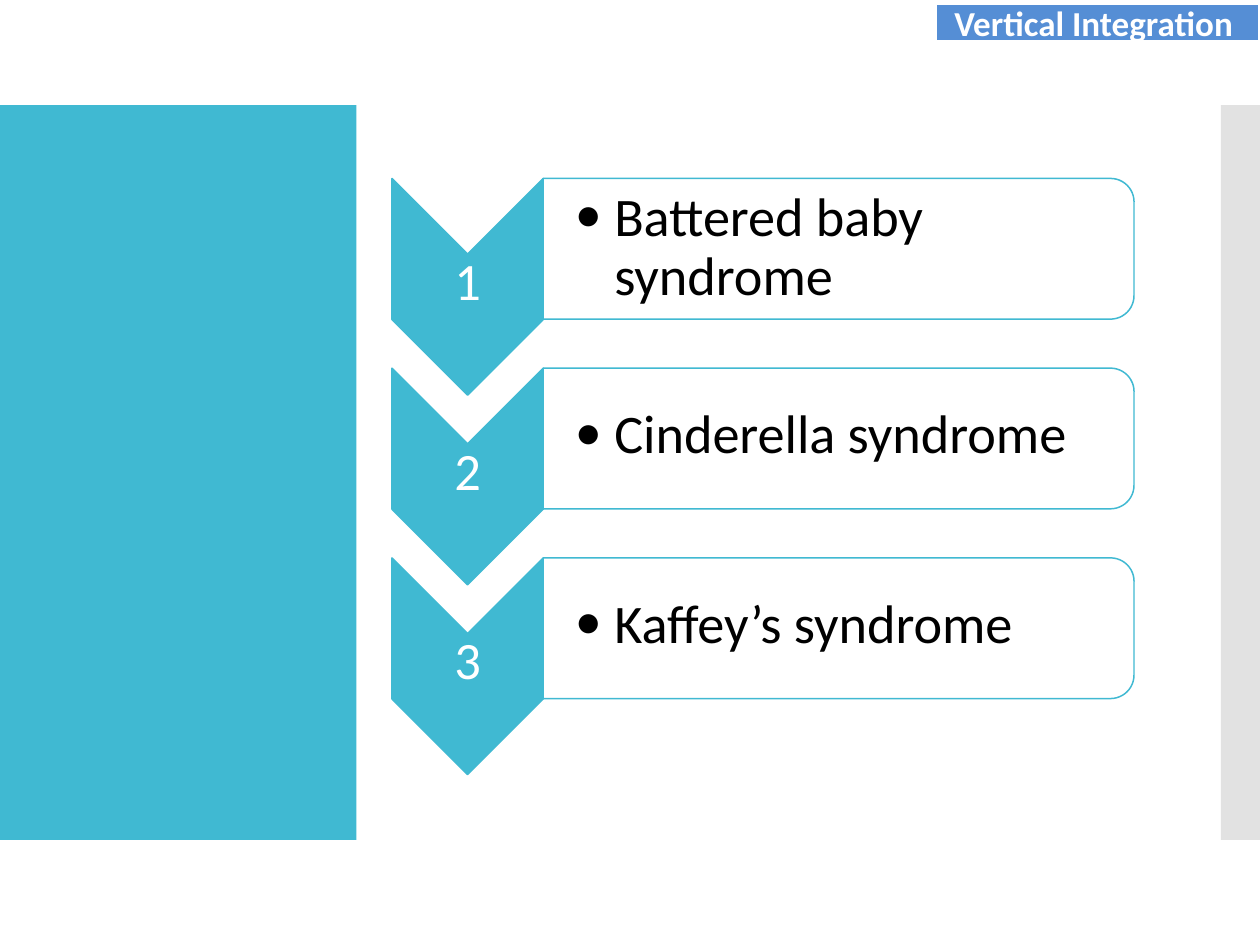
from lxml import etree
from pptx import Presentation
from pptx.dml.color import RGBColor
from pptx.enum.shapes import MSO_SHAPE
from pptx.enum.text import MSO_ANCHOR, MSO_AUTO_SIZE, PP_ALIGN
from pptx.oxml.ns import qn
from pptx.util import Pt

RECTANGLE = MSO_SHAPE.RECTANGLE
CHEVRON = MSO_SHAPE.CHEVRON
ROUND_END = MSO_SHAPE.ROUND_2_SAME_RECTANGLE
TOP, MIDDLE = MSO_ANCHOR.TOP, MSO_ANCHOR.MIDDLE
LEFT, CENTER = PP_ALIGN.LEFT, PP_ALIGN.CENTER
NO_AUTOFIT = MSO_AUTO_SIZE.NONE

TEAL = RGBColor(0x40, 0xB9, 0xD2)
GREY = RGBColor(0xC7, 0xC7, 0xC7)
BLUE = RGBColor(0x55, 0x8E, 0xD5)
WHITE = RGBColor(0xFF, 0xFF, 0xFF)
BLACK = RGBColor(0x00, 0x00, 0x00)

COMPARISON_LAYOUT = 4
LINE_WIDTH = 0.84
PANEL_TOP, PANEL_HEIGHT = 60, 420
ROW_TOP, ROW_PITCH, ROW_HEIGHT = 102, 108.4, 80.4
CHEVRON_LEFT, CHEVRON_WIDTH, CHEVRON_HEIGHT = 224, 86.4, 123.8
BOX_LEFT, BOX_WIDTH = CHEVRON_LEFT + CHEVRON_WIDTH, 337.6
LIST_LEFT = 327

TITLE_FONT = {"name": "Calibri", "size": Pt(20), "bold": True}
NUMBER_FONT = {"name": "Calibri", "size": Pt(30), "bold": False}
LIST_FONT = {"name": "Calibri", "size": Pt(31), "bold": False}

# Text, offset from the row top, width, height, top inset, line spacing
SYNDROMES = [
    ("Battered baby syndrome", 0, 206.6, 73.4, 5, Pt(34.1)),
    ("Cinderella syndrome", 17, 288, 39, 0.7, 1.0),
    ("Kaffey’s syndrome", 17, 261.4, 39, 0.7, 1.0),
]


def set_format(target, values):
    for name, value in values.items():
        setattr(target, name, value)


def place(shape, left, top, width, height):
    set_format(shape, {"left": Pt(left), "top": Pt(top),
                       "width": Pt(width), "height": Pt(height)})


def add_block(slide, kind, left, top, width, height, fill=None, line=None):
    shape = slide.shapes.add_shape(kind, Pt(left), Pt(top), Pt(width), Pt(height))
    shape.shadow.inherit = False
    if fill is None:
        shape.fill.background()
    else:
        shape.fill.solid()
        shape.fill.fore_color.rgb = fill
    if line is None:
        shape.line.fill.background()
    else:
        shape.line.color.rgb = line
        shape.line.width = Pt(LINE_WIDTH)
    return shape


def add_turned_block(slide, kind, left, top, width, height, **colors):
    """Add a preset turned a quarter clockwise that fills the given area."""
    shift = (width - height) / 2
    shape = add_block(slide, kind, left + shift, top - shift, height, width, **colors)
    shape.rotation = 90


def write_text(shape, text, font, color, alignment, frame, spacing=1.0, bullet=False):
    text_frame = shape.text_frame
    set_format(text_frame, {"auto_size": NO_AUTOFIT, **frame})
    text_frame.text = text
    paragraph = text_frame.paragraphs[0]
    if bullet:
        add_bullet(paragraph)
    set_format(paragraph, {"alignment": alignment, "space_before": Pt(0),
                           "line_spacing": spacing})
    set_format(paragraph.font, font)
    paragraph.font.color.rgb = color


def add_bullet(paragraph):
    properties = paragraph._p.get_or_add_pPr()
    properties.set("marL", str(Pt(24)))
    properties.set("indent", str(Pt(-22.5)))
    etree.SubElement(properties, qn("a:buFont")).set("typeface", "Calibri")
    etree.SubElement(properties, qn("a:buChar")).set("char", "•")


def tight_frame(top_inset, wrap):
    return {"margin_left": 0, "margin_right": 0, "margin_bottom": 0,
            "margin_top": Pt(top_inset), "vertical_anchor": TOP, "word_wrap": wrap}


def add_panels(slide):
    add_block(slide, RECTANGLE, 0, PANEL_TOP, 203.6, PANEL_HEIGHT, fill=TEAL)
    strip = add_block(slide, RECTANGLE, 697.7, PANEL_TOP, 22.3, PANEL_HEIGHT, fill=GREY)
    color = strip.fill._xPr.find(qn("a:solidFill"))[0]
    etree.SubElement(color, qn("a:alpha")).set("val", "50000")


def format_title(title):
    place(title, 534.4, 1.7, 185.6, 22)
    title.fill.solid()
    title.fill.fore_color.rgb = BLUE
    title.line.color.rgb = WHITE
    title.line.width = Pt(2)
    write_text(title, "Vertical Integration ", TITLE_FONT, WHITE, CENTER,
               {"vertical_anchor": MIDDLE, "word_wrap": True})


def add_row(slide, placeholder, index, syndrome):
    text, offset, width, height, inset, spacing = syndrome
    top = ROW_TOP + index * ROW_PITCH

    # Numbered chevron
    add_turned_block(slide, CHEVRON, CHEVRON_LEFT, top, CHEVRON_WIDTH,
                     CHEVRON_HEIGHT, fill=TEAL, line=TEAL)
    number = slide.shapes.add_textbox(Pt(CHEVRON_LEFT + 35), Pt(top + 39),
                                      Pt(CHEVRON_WIDTH - 70), Pt(38))
    write_text(number, str(index + 1), NUMBER_FONT, WHITE, CENTER,
               tight_frame(0.7, False))

    # Outlined box with its list item
    add_turned_block(slide, ROUND_END, BOX_LEFT, top, BOX_WIDTH, ROW_HEIGHT, line=TEAL)
    place(placeholder, LIST_LEFT, top + offset, width, height)
    write_text(placeholder, text, LIST_FONT, BLACK, LEFT,
               tight_frame(inset, True), spacing, bullet=True)


def main():
    presentation = Presentation()
    presentation.slide_width, presentation.slide_height = Pt(720), Pt(540)
    slide = presentation.slides.add_slide(presentation.slide_layouts[COMPARISON_LAYOUT])
    title, *bodies, unused = list(slide.placeholders)
    unused._element.getparent().remove(unused._element)

    add_panels(slide)
    format_title(title)
    for index, (body, syndrome) in enumerate(zip(bodies, SYNDROMES)):
        add_row(slide, body, index, syndrome)

    presentation.save("out.pptx")


if __name__ == "__main__":
    main()
